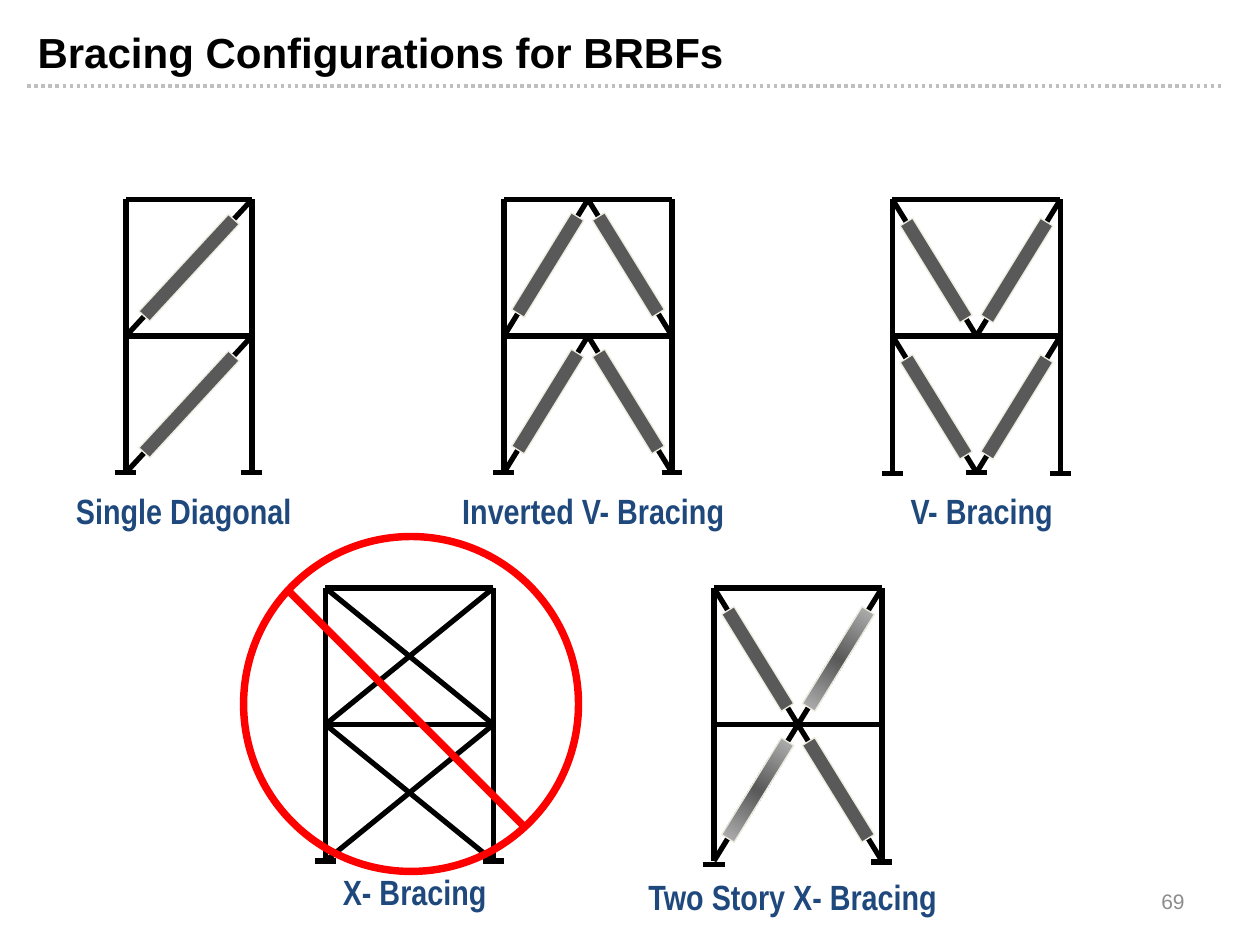
from copy import deepcopy
from math import atan2, degrees, hypot

from lxml.etree import SubElement
from pptx import Presentation
from pptx.dml.color import RGBColor as RGB
from pptx.enum.dml import MSO_LINE as Dash
from pptx.enum.shapes import MSO_CONNECTOR as Conn, MSO_SHAPE as Shape
from pptx.enum.text import MSO_ANCHOR as Anchor, PP_ALIGN as Align
from pptx.oxml.ns import qn
from pptx.util import Pt

PX = 7620
BLACK = RGB(0, 0, 0)
NAVY = RGB(0x1F, 0x49, 0x7D)
RED = RGB(0xFF, 0, 0)
RULE = RGB(0xBF, 0xBF, 0xBF)
GRAY = RGB(0x8C, 0x8C, 0x8C)
STEEL = RGB(0x59, 0x59, 0x59)
SHINE = RGB(0xB4, 0xB4, 0xB4)
EDGE = RGB(0xEE, 0xEC, 0xE1)
STORY = 130


def emu(*vals):
    return [round(v * PX) for v in vals]


def line(shapes, start, end, color=BLACK, width=3):
    conn = shapes.add_connector(Conn.STRAIGHT, *emu(*start, *end))
    conn.line.color.rgb = color
    conn.line.width = Pt(width)
    SubElement(conn._element.spPr, qn("a:effectLst"))
    return conn


def text(slide, box, words, size, color, font="Arial", bold=False,
         align=Align.LEFT, anchor=Anchor.TOP):
    frame = slide.shapes.add_textbox(*emu(*box)).text_frame
    frame.word_wrap = True
    frame.vertical_anchor = anchor
    para = frame.paragraphs[0]
    para.alignment = align
    run = para.add_run()
    run.text = words
    run.font.name = font
    run.font.size = Pt(size)
    run.font.bold = bold
    run.font.color.rgb = color


def shade(bar):
    bar.fill.gradient()
    bar.fill.gradient_angle = 0
    first = bar._element.spPr.find(".//" + qn("a:gs"))
    first.addnext(deepcopy(first))
    stops = bar.fill.gradient_stops
    for stop, place, color in zip(stops, (0, 0.5, 1), (SHINE, STEEL, SHINE)):
        stop.position = place
        stop.color.rgb = color


def sleeve(shapes, far, meet, part, shiny):
    dx, dy = far[0] - meet[0], far[1] - meet[1]
    size, thick = 0.71 * hypot(dx, dy), 14
    mid_x, mid_y = meet[0] + part * dx, meet[1] + part * dy
    bar = shapes.add_shape(Shape.RECTANGLE, *emu(
        mid_x - size / 2, mid_y - thick / 2, size, thick))
    bar.rotation = degrees(atan2(dy, dx)) % 180
    bar.shadow.inherit = False
    if shiny:
        shade(bar)
    else:
        bar.fill.solid()
        bar.fill.fore_color.rgb = STEEL
    bar.line.color.rgb = EDGE
    bar.line.width = Pt(0.75)


def tower(slide, box, braces, feet, part=0.48, sleeved=True, shiny=()):
    left, top, wide = box
    shapes = slide.shapes.add_group_shape().shapes

    def at(x, y):
        return left + x, top + y

    for x, y in feet:
        line(shapes, at(x - 10, y), at(x + 10, y))
    for y in (0, STORY):
        line(shapes, at(0, y), at(wide, y))
        for x in (0, wide):
            line(shapes, at(x, y), at(x, y + STORY))
    ends = [(at(*far), at(*meet)) for far, meet in braces]
    for far, meet in ends:
        line(shapes, far, meet)
    if sleeved:
        for i, (far, meet) in enumerate(ends):
            sleeve(shapes, far, meet, part, i in shiny)


def ban(slide, box):
    left, top, size = box
    shapes = slide.shapes.add_group_shape().shapes
    ring = shapes.add_shape(Shape.OVAL, *emu(left, top, size, size))
    ring.shadow.inherit = False
    ring.fill.background()
    ring.line.color.rgb = RED
    ring.line.width = Pt(4.25)
    line(shapes, (left + 40, top + 49), (left + 269, top + 278), RED, 4.25)


def header(slide, box):
    left, top, wide, high = box
    rule = line(slide.shapes, (left + 2, top + 63), (left + 1142, top + 63), RULE, 2)
    rule.line.dash_style = Dash.ROUND_DOT
    text(slide, (left, top, wide, high), "Bracing Configurations for BRBFs",
         24, BLACK, bold=True)


def labels(slide):
    for left, top, words in (
        (10, 460, "Single Diagonal"),
        (400, 460, "Inverted V- Bracing"),
        (770, 460, "V- Bracing"),
        (230, 823, "X- Bracing"),
        (590, 828, "Two Story X- Bracing"),
    ):
        text(slide, (left, top, 330, 52), words, 20, NAVY, "Arial Narrow",
             True, Align.CENTER)


def towers(slide):
    wide, mid, base = 160, 80, 2 * STORY
    rows = (0, STORY)
    feet = [(0, base), (wide, base)]
    sides = (0, wide)

    tower(slide, (120, 190, 120), [((0, y + STORY), (120, y)) for y in rows],
          [(0, base), (120, base)], part=0.5)
    tower(slide, (480, 190, wide),
          [((x, y + STORY), (mid, y)) for y in rows for x in sides], feet)
    tower(slide, (850, 190, wide),
          [((x, y), (mid, y + STORY)) for y in rows for x in sides],
          [(0, base + 1), (wide, base + 1), (mid, base)])
    tower(slide, (310, 560, wide),
          [((x, y), (wide - x, y + STORY)) for y in rows for x in sides],
          feet, sleeved=False)
    tower(slide, (680, 560, wide),
          [((x, y), (mid, STORY)) for y in (0, base) for x in sides],
          [(0, base + 3), (wide, base + 1)], shiny=(1, 2))


def main():
    deck = Presentation()
    deck.slide_width, deck.slide_height = emu(1200, 900)
    slide = deck.slides.add_slide(deck.slide_layouts[6])
    header(slide, (24, 19, 1078, 53))
    labels(slide)
    towers(slide)
    ban(slide, (232, 511, 319))
    text(slide, (860, 834, 280, 48), "69", 12, GRAY, align=Align.RIGHT,
         anchor=Anchor.MIDDLE)
    deck.save("out.pptx")


if __name__ == "__main__":
    main()
